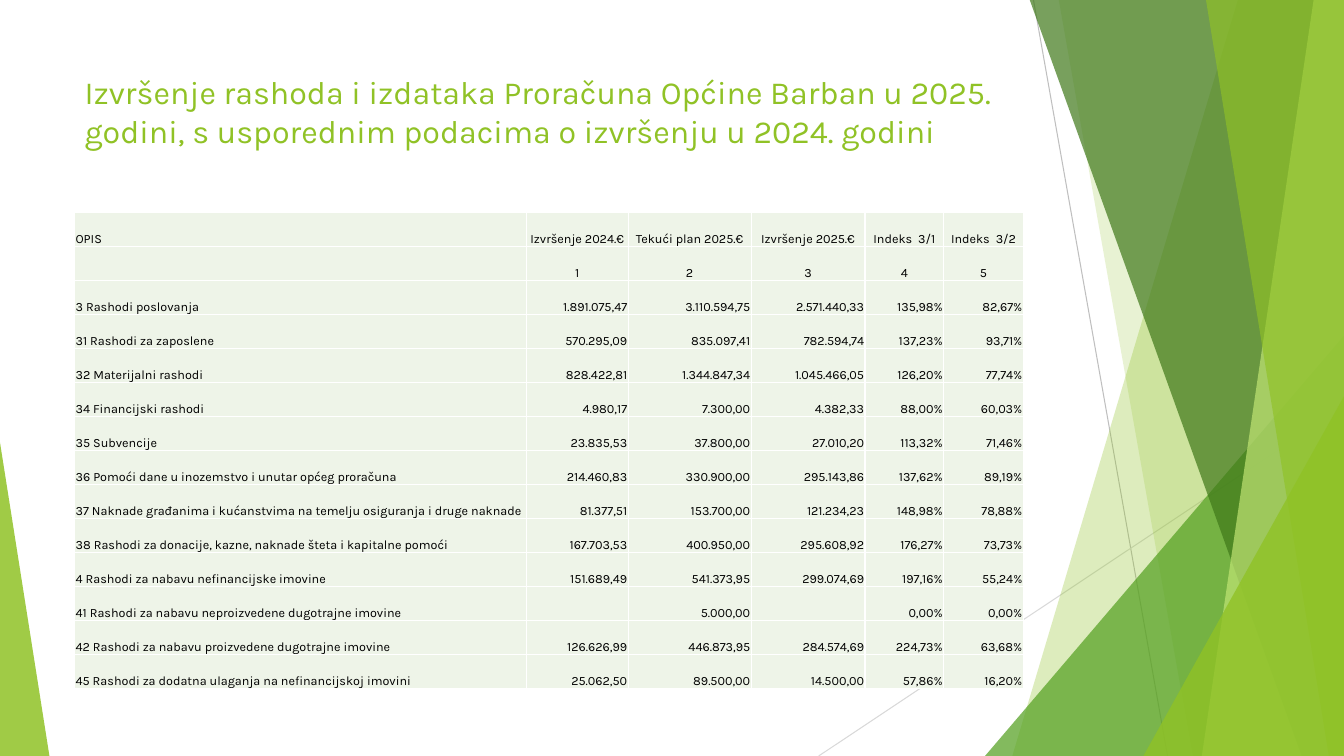
from lxml.etree import SubElement
from pptx import Presentation
from pptx.dml.color import RGBColor
from pptx.enum.shapes import MSO_CONNECTOR as Connector, MSO_SHAPE as Shape
from pptx.enum.text import MSO_ANCHOR as Anchor, PP_ALIGN as Align
from pptx.oxml.ns import qn
from pptx.util import Inches, Pt

FONT = "Karla"
COLORS = {
    "lime": "90C226", "green": "54A021", "forest": "3F7819", "pale": "C0E474",
    "gray": "BFBFBF", "silver": "D9D9D9", "cell": "EEF4E8", "text": "000000", "border": "FFFFFF",
}
TITLE = ("Izvršenje rashoda i izdataka Proračuna Općine Barban u 2025. godini, "
         "s usporednim podacima o izvršenju u 2024. godini")
COLUMN_WIDTHS = [4.48, 1.01, 1.22, 1.13, 0.78, 0.79]
HEADINGS = [
    ["OPIS", "Izvršenje 2024.€", "Tekući plan 2025.€", "Izvršenje 2025.€", "Indeks  3/1", "Indeks  3/2"],
    ["", "1", "2", "3", "4", "5"],
]
EXPENSES = [
    ["3 Rashodi poslovanja", "1.891.075,47", "3.110.594,75", "2.571.440,33", "135,98%", "82,67%"],
    ["31 Rashodi za zaposlene", "570.295,09", "835.097,41", "782.594,74", "137,23%", "93,71%"],
    ["32 Materijalni rashodi", "828.422,81", "1.344.847,34", "1.045.466,05", "126,20%", "77,74%"],
    ["34 Financijski rashodi", "4.980,17", "7.300,00", "4.382,33", "88,00%", "60,03%"],
    ["35 Subvencije", "23.835,53", "37.800,00", "27.010,20", "113,32%", "71,46%"],
    ["36 Pomoći dane u inozemstvo i unutar općeg proračuna",
     "214.460,83", "330.900,00", "295.143,86", "137,62%", "89,19%"],
    ["37 Naknade građanima i kućanstvima na temelju osiguranja i druge naknade",
     "81.377,51", "153.700,00", "121.234,23", "148,98%", "78,88%"],
    ["38 Rashodi za donacije, kazne, naknade šteta i kapitalne pomoći",
     "167.703,53", "400.950,00", "295.608,92", "176,27%", "73,73%"],
    ["4 Rashodi za nabavu nefinancijske imovine",
     "151.689,49", "541.373,95", "299.074,69", "197,16%", "55,24%"],
    ["41 Rashodi za nabavu neproizvedene dugotrajne imovine", "", "5.000,00", "", "0,00%", "0,00%"],
    ["42 Rashodi za nabavu proizvedene dugotrajne imovine",
     "126.626,99", "446.873,95", "284.574,69", "224,73%", "63,68%"],
    ["45 Rashodi za dodatna ulaganja na nefinancijskoj imovini",
     "25.062,50", "89.500,00", "14.500,00", "57,86%", "16,20%"],
]


def rgb(name):
    """Return the named palette colour."""
    return RGBColor.from_string(COLORS[name])


def paint(shape, color, opacity):
    """Fill a shape with a see-through colour, without outline or shadow."""
    shape.shadow.inherit = False
    shape.line.fill.background()
    shape.fill.solid()
    shape.fill.fore_color.rgb = rgb(color)
    tint = shape.fill._xPr.find(qn("a:solidFill"))[0]
    SubElement(tint, qn("a:alpha"), val=str(opacity * 1000))


def add_ray(slide, start, end, color):
    """Draw a thin straight line."""
    ray = slide.shapes.add_connector(Connector.STRAIGHT, *map(Inches, start + end))
    ray.line.color.rgb = rgb(color)
    ray.line.width = Pt(0.75)
    SubElement(ray._element.spPr, qn("a:effectLst"))


def add_band(slide, box, top_x, bottom_x, color, opacity):
    """Draw a full-height band with a slanted left side, up to the right edge of the box."""
    left, top, width, height = box
    right, bottom, above = left + width, top + height, top - 0.01
    corners = [(right, above), (right, bottom), (left + bottom_x, bottom)]
    outline = slide.shapes.build_freeform(Inches(left + top_x), Inches(above))
    outline.add_line_segments([(Inches(x), Inches(y)) for x, y in corners])
    paint(outline.convert_to_shape(), color, opacity)


def add_corner(slide, box, width, height, apex, color, opacity):
    """Draw a right triangle in the bottom corner of the box on the side of its apex."""
    left = box[0] + apex * (box[2] - width)
    top = box[1] + box[3] - height
    corner = slide.shapes.add_shape(Shape.ISOSCELES_TRIANGLE, *map(Inches, (left, top, width, height)))
    corner.adjustments[0] = apex
    paint(corner, color, opacity)


def add_facets(slide, box):
    """Draw the green facets at the sides of the slide."""
    left, top, width, height = box
    right, bottom = left + width, top + height
    add_ray(slide, (left + 10.25, top), (left + 11.58, bottom), "gray")
    add_ray(slide, (right, top + 4.03), (left + 8.12, bottom), "silver")
    add_band(slide, box, 12.28, 10.04, "lime", 30)
    add_band(slide, box, 10.5, 11.83, "lime", 20)
    add_corner(slide, box, 3.56, 4.17, 1, "green", 72)
    add_band(slide, box, 10.21, 12.91, "forest", 70)
    add_band(slide, box, 13.03, 11.92, "pale", 70)
    add_band(slide, box, 11.96, 13.18, "lime", 65)
    add_corner(slide, box, 1.99, 3.57, 1, "lime", 80)
    add_corner(slide, box, 0.49, 3.11, 0, "lime", 85)


def write(paragraph, words, size, color):
    """Add one run of text to a paragraph."""
    run = paragraph.add_run()
    run.text = words
    run.font.name = FONT
    run.font.size = Pt(size)
    run.font.color.rgb = rgb(color)


def add_title(slide, box):
    """Write the slide title."""
    frame = slide.shapes.add_textbox(*map(Inches, box)).text_frame
    frame.word_wrap = True
    frame.vertical_anchor = Anchor.TOP
    write(frame.paragraphs[0], TITLE, 23, "lime")


def style_cell(cell):
    """Give a cell white borders, a pale fill and tight margins."""
    properties = cell._tc.get_or_add_tcPr()
    for side in ("lnL", "lnR", "lnT", "lnB"):
        border = SubElement(properties, qn(f"a:{side}"), w=str(Pt(1)))
        SubElement(SubElement(border, qn("a:solidFill")), qn("a:srgbClr"), val=COLORS["border"])
    cell.fill.solid()
    cell.fill.fore_color.rgb = rgb("cell")
    cell.margin_left = cell.margin_right = cell.margin_top = Inches(0.01)
    cell.margin_bottom = 0
    cell.vertical_anchor = Anchor.BOTTOM


def add_expenses(slide, box):
    """Build the table of expenses by account."""
    rows = HEADINGS + EXPENSES
    table = slide.shapes.add_table(len(rows), len(COLUMN_WIDTHS), *map(Inches, box)).table
    for column, width in zip(table.columns, COLUMN_WIDTHS):
        column.width = Inches(width)
    for r, row in enumerate(rows):
        table.rows[r].height = Inches(box[3] / len(rows))
        number_align = Align.CENTER if r < len(HEADINGS) else Align.RIGHT
        for c, words in enumerate(row):
            cell = table.cell(r, c)
            style_cell(cell)
            paragraph = cell.text_frame.paragraphs[0]
            paragraph.alignment = number_align if c else Align.LEFT
            if words:
                write(paragraph, words, 9, "text")


def main():
    """Build and save the slide."""
    deck = Presentation()
    deck.slide_width, deck.slide_height = Inches(13.33), Inches(7.5)
    slide = deck.slides.add_slide(deck.slide_layouts[6])
    add_facets(slide, (0, 0, 13.33, 7.5))
    add_title(slide, (0.74, 0.67, 9.4, 1.44))
    add_expenses(slide, (0.74, 2.11, 9.4, 4.72))
    deck.save("out.pptx")


if __name__ == "__main__":
    main()
